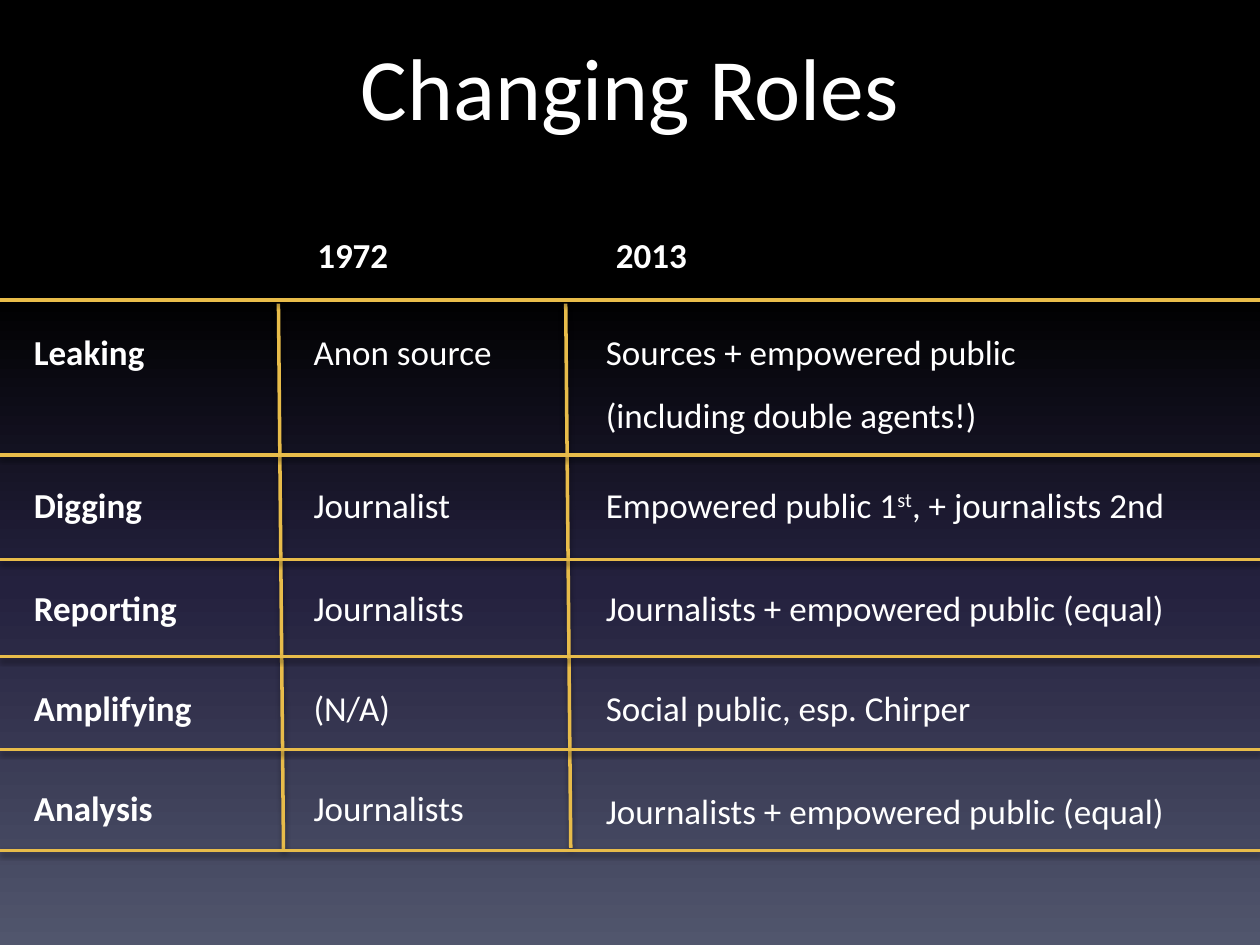
"""Build the "Changing Roles" slide comparing 1972 with 2013."""
from lxml import etree
from pptx import Presentation
from pptx.dml.color import RGBColor
from pptx.enum.shapes import MSO_CONNECTOR
from pptx.enum.text import MSO_ANCHOR, PP_ALIGN
from pptx.oxml import parse_xml
from pptx.oxml.ns import nsdecls, qn
from pptx.util import Inches, Pt

STRAIGHT = MSO_CONNECTOR.STRAIGHT
TOP = MSO_ANCHOR.TOP
CENTER = PP_ALIGN.CENTER

THEME = {
    "font": "Calibri",
    "text": RGBColor(0xFF, 0xFF, 0xFF),
    "rule": RGBColor(0xE8, 0xBC, 0x4A),
    "gradient": [(0, "000000"), (31, "000000"), (62, "24213E"), (100, "51566D")],
    "title_size": Pt(50),
    "body_size": Pt(20),
    "rule_width": Pt(2),
}
SHADOW = (
    f'<a:effectLst {nsdecls("a")}><a:outerShdw blurRad="39370" dist="20320" dir="5400000" '
    'rotWithShape="0"><a:srgbClr val="000000"><a:alpha val="38000"/></a:srgbClr>'
    "</a:outerShdw></a:effectLst>"
)


def add_span(para, text, size, bold=False, raised=False):
    span = para.add_run()
    span.text = text
    span.font.color.rgb = THEME["text"]
    style = {"name": THEME["font"], "size": size, "bold": bold}
    for name, value in style.items():
        setattr(span.font, name, value)
    if raised:
        span.font._element.set("baseline", "30000")


def add_text(left, top, width, height, lines, bold=False):
    box = page.shapes.add_textbox(Inches(left), Inches(top), Inches(width), Inches(height))
    box.text_frame.word_wrap = True
    para = box.text_frame.paragraphs[0]
    para.line_spacing = 1.5
    for index, line in enumerate(lines):
        if index:
            para.add_line_break()
        for part, text in enumerate(line.split("^")):
            add_span(para, text, THEME["body_size"], bold, raised=part % 2 == 1)


deck = Presentation()
deck.slide_width, deck.slide_height = Inches(10), Inches(7.5)
page = deck.slides.add_slide(deck.slide_layouts[5])

fill = page.background.fill
fill.gradient()
fill.gradient_angle = 270
stops = page._element.find(".//" + qn("a:gsLst"))
for stop in list(stops):
    stops.remove(stop)
for position, color in THEME["gradient"]:
    stop = etree.SubElement(stops, qn("a:gs"), pos=str(position * 1000))
    etree.SubElement(stop, qn("a:srgbClr"), val=color)

title = page.shapes.title
place = {"left": 0.5, "top": 0.18, "width": 9, "height": 1.25}
for name, value in place.items():
    setattr(title, name, Inches(value))
frame = title.text_frame
frame.vertical_anchor = TOP
frame.margin_top = Inches(0.08)
frame.paragraphs[0].alignment = CENTER
add_span(frame.paragraphs[0], "Changing Roles", THEME["title_size"])

for left, year in [(2.42, "1972"), (4.79, "2013")]:
    add_text(left, 1.64, 2.1, 0.75, [year], bold=True)

EQUAL = "Journalists + empowered public (equal)"
rows = [
    (2.41, 2.41, "Leaking", "Anon source",
     ["Sources + empowered public", "(including double agents!)"]),
    (3.62, 3.62, "Digging", "Journalist", ["Empowered public 1^st^, + journalists 2nd"]),
    (4.44, 4.44, "Reporting", "Journalists", [EQUAL]),
    (5.23, 5.23, "Amplifying", "(N/A)", ["Social public, esp. Chirper"]),
    (6.03, 6.05, "Analysis", "Journalists", [EQUAL]),
]
for top, later_top, role, earlier, later in rows:
    add_text(0.17, top, 1.93, 0.7, [role], bold=True)
    add_text(2.39, top, 1.93, 0.7, [earlier])
    add_text(4.71, later_top, 5.15, 0.7 if len(later) == 1 else 1.17, later)

column_rules = [(2.21, 2.41, 2.25, 6.75), (4.49, 2.41, 4.53, 6.73)]
row_rules = [(0, y, 10, y) for y in (2.38, 3.61, 4.44, 5.21, 5.95, 6.75)]
for ends in column_rules + row_rules:
    rule = page.shapes.add_connector(STRAIGHT, *map(Inches, ends))
    rule.line.color.rgb = THEME["rule"]
    rule.line.width = THEME["rule_width"]
    rule._element.spPr.append(parse_xml(SHADOW))

deck.save("out.pptx")
